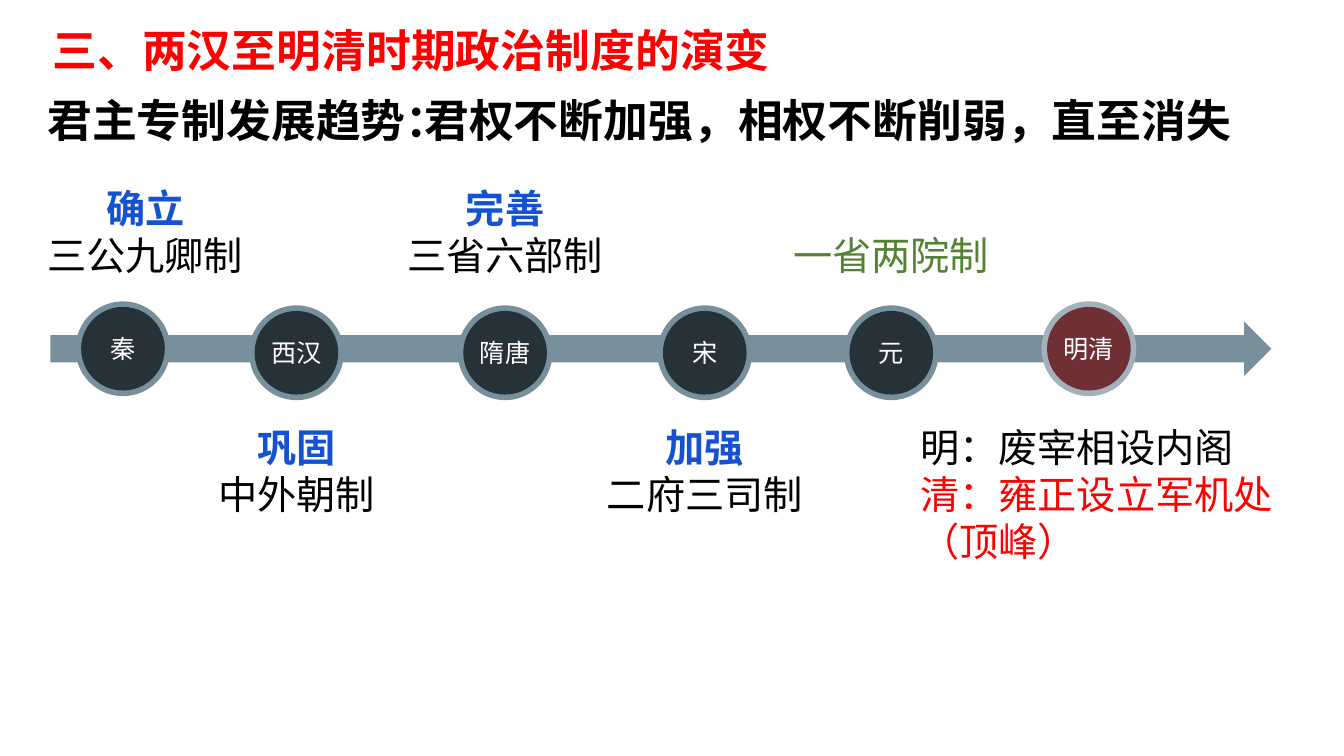
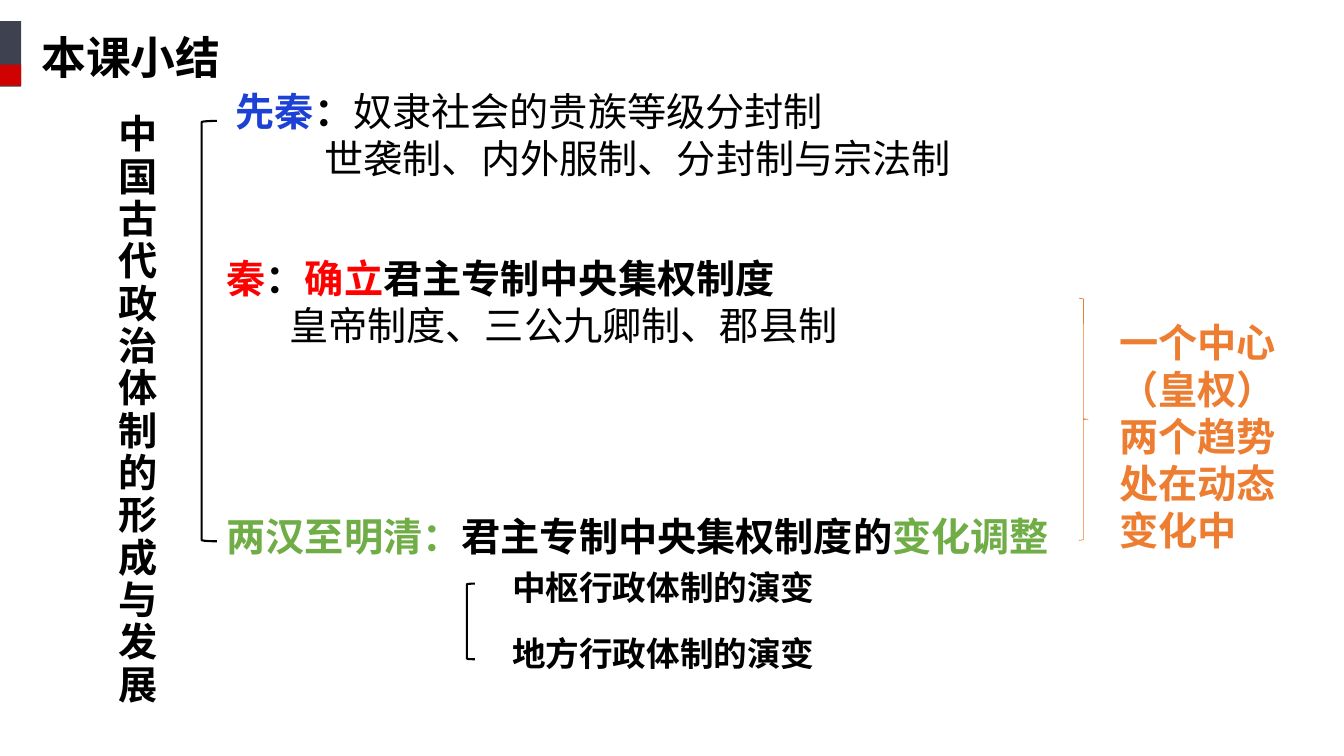
import pptx
import pptx.util
import pptx.dml.color
import pptx.enum.shapes
import pptx.enum.text
import pptx.oxml.ns
import lxml.etree

Inches = pptx.util.Inches
SHAPE = pptx.enum.shapes.MSO_SHAPE
ALIGN = pptx.enum.text.PP_ALIGN
ANCHOR = pptx.enum.text.MSO_ANCHOR
CJK = "Noto Sans CJK SC"
LATIN = "Calibri"
BLACK, WHITE, RED = "000000", "FFFFFF", "FF0000"
BLUE, DEEP_BLUE = "1552D1", "1D41D5"
GREEN, DARK_GREEN, ORANGE = "70AD47", "548235", "ED7D31"
STEEL, NIGHT, SILVER, MAROON = "78909C", "263238", "A3B1BD", "6F2F35"
SLATE, CRIMSON = "3E4150", "CF0101"

ERAS = [
    ("秦", 1.22, 3.46, STEEL, NIGHT),
    ("西汉", 2.94, 3.5, STEEL, NIGHT),
    ("隋唐", 5.01, 3.5, STEEL, NIGHT),
    ("宋", 6.99, 3.5, STEEL, NIGHT),
    ("元", 8.84, 3.5, STEEL, NIGHT),
    ("明清", 10.8, 3.46, SILVER, MAROON),
]
RING, DISC = 0.94, 0.83

LABEL_WIDTH = 2.14
LABELS = [
    (1.44, 1.78, "确立", "三公九卿制"),
    (2.94, 4.15, "巩固", "中外朝制"),
    (5.01, 1.78, "完善", "三省六部制"),
    (6.99, 4.15, "加强", "二府三司制"),
]
TREND = [
    ((0.37, 0.87, 4.2, 0.64), "君主专制发展趋势："),
    ((4.11, 0.87, 8.98, 0.64), "君权不断加强，相权不断削弱，直至消失"),
]
MING_QING = [
    [("明：废宰相设内阁", BLACK, False)],
    [("清：雍正设立军机处", RED, False)],
    [("（顶峰）", RED, False)],
]

PERIODS = [
    ((2.24, 0.85, 10.65, 0.97), 0.88, [
        [("先秦", DEEP_BLUE, True), ("：", BLACK, True), ("奴隶社会的贵族等级分封制", BLACK, False)],
        [("世袭制、内外服制、分封制与宗法制", BLACK, False)],
    ]),
    ((2.15, 2.58, 9.86, 0.82), 0.62, [
        [("秦", RED, True), ("：", BLACK, True), ("确立", RED, True), ("君主专制中央集权制度", BLACK, True)],
        [("皇帝制度、三公九卿制、郡县制", BLACK, False)],
    ]),
    ((2.15, 4.79, 9.16, 1.05), 0, [
        [("两汉至明清：", GREEN, True), ("君主专制中央集权制度的", BLACK, True), ("变化调整", GREEN, True)],
    ]),
]
BRANCHES = [
    ((4.98, 5.57, 4.75, 0.56), "中枢行政体制的演变"),
    ((4.98, 6.22, 4.75, 0.56), "地方行政体制的演变"),
]
BRACKETS = [
    (SHAPE.LEFT_BRACKET, (2, 1.2, 0.15, 4.17), BLACK, 1.5),
    (SHAPE.LEFT_BRACKET, (4.63, 5.79, 0.08, 0.75), BLACK, 1.5),
    (SHAPE.RIGHT_BRACE, (10.7, 2.96, 0.09, 2.4), ORANGE, 0.5),
]
CONCLUSION = ["一个中心", "（皇权）", "两个趋势", "处在动态变化中"]


def rgb(color):
    return pptx.dml.color.RGBColor.from_string(color)


def place(sp, box):
    sp.left, sp.top, sp.width, sp.height = map(Inches, box)


def write(sp, lines, size, align=ALIGN.LEFT, anchor=ANCHOR.TOP, wrap=True,
          spacing=None, latin=CJK):
    tf = sp.text_frame
    tf.word_wrap = wrap
    tf.auto_size = pptx.enum.text.MSO_AUTO_SIZE.NONE
    tf.vertical_anchor = anchor
    for i, line in enumerate(lines):
        p = tf.paragraphs[0] if i == 0 else tf.add_paragraph()
        p.alignment = align
        if spacing:
            p.line_spacing = spacing
        for text, color, bold in line:
            r = p.add_run()
            r.text = text
            r.font.size = pptx.util.Pt(size)
            r.font.name = latin
            r.font.bold = bold
            r.font.color.rgb = rgb(color)
            rPr = r._r.get_or_add_rPr()
            rPr.set("lang", "zh-CN")
            ea = lxml.etree.SubElement(rPr, pptx.oxml.ns.qn("a:ea"))
            ea.set("typeface", CJK)
    return tf


def add_text(slide, box, lines, size, **style):
    return write(slide.shapes.add_textbox(*map(Inches, box)), lines, size, **style)


def add_filled(shapes, kind, box, color):
    sp = shapes.add_shape(kind, *map(Inches, box))
    sp.shadow.inherit = False
    sp.fill.solid()
    sp.fill.fore_color.rgb = rgb(color)
    sp.line.fill.background()
    return sp


def add_slide(prs, title, box, color, **style):
    slide = prs.slides.add_slide(prs.slide_layouts[5])
    place(slide.shapes.title, box)
    write(slide.shapes.title, [[(title, color, True)]], 32, **style)
    return slide


def add_disc(shapes, x, y, size, color):
    return add_filled(shapes, SHAPE.OVAL, (x - size / 2, y - size / 2, size, size), color)


def build_timeline(prs):
    slide = add_slide(prs, "三、两汉至明清时期政治制度的演变", (0.42, 0.07, 9.19, 0.75),
                      RED, spacing=1.2, latin=LATIN)
    for box, text in TREND:
        add_text(slide, box, [[(text, BLACK, True)]], 32, wrap=False)
    add_filled(slide.shapes, SHAPE.RIGHT_ARROW, (0.5, 3.19, 12.11, 0.54), STEEL)
    for era, x, y, ring, fill in ERAS:
        group = slide.shapes.add_group_shape()
        add_disc(group.shapes, x, y, RING, ring)
        disc = add_disc(group.shapes, x, y, DISC, fill)
        tf = write(disc, [[(era, WHITE, False)]], 18, align=ALIGN.CENTER, anchor=ANCHOR.MIDDLE)
        tf.margin_left = tf.margin_right = tf.margin_top = tf.margin_bottom = 0
    for x, top, stage, system in LABELS:
        add_text(slide, (x - LABEL_WIDTH / 2, top, LABEL_WIDTH, 1.04),
                 [[(stage, BLUE, True)], [(system, BLACK, False)]], 28,
                 align=ALIGN.CENTER, wrap=False)
    add_text(slide, (7.77, 2.25, LABEL_WIDTH, 0.57),
             [[("一省两院制", DARK_GREEN, False)]], 28, wrap=False)
    add_text(slide, (9.03, 4.15, 3.7, 1.51), MING_QING, 28, wrap=False)


def build_summary(prs):
    slide = add_slide(prs, "本课小结", (0.31, 0.21, 6.88, 0.77), BLACK,
                      anchor=ANCHOR.MIDDLE, spacing=0.9)
    add_filled(slide.shapes, SHAPE.RECTANGLE, (0, 0.21, 0.21, 0.65), SLATE)
    add_filled(slide.shapes, SHAPE.RECTANGLE, (0, 0.64, 0.21, 0.21), CRIMSON)
    add_text(slide, (1.08, 1.2, 0.7, 5.76), [[("中国古代政治体制的形成与发展", BLACK, True)]],
             28, anchor=ANCHOR.MIDDLE, spacing=0.9)
    for box, indent, lines in PERIODS:
        tf = add_text(slide, box, lines, 28, anchor=ANCHOR.MIDDLE)
        for p in tf.paragraphs[1:]:
            p._p.get_or_add_pPr().set("marL", str(Inches(indent)))
    for box, text in BRANCHES:
        add_text(slide, box, [[(text, BLACK, True)]], 24, anchor=ANCHOR.MIDDLE, spacing=0.9)
    for kind, box, color, width in BRACKETS:
        sp = slide.shapes.add_shape(kind, *map(Inches, box))
        sp.shadow.inherit = False
        sp.fill.background()
        sp.line.color.rgb = rgb(color)
        sp.line.width = pptx.util.Pt(width)
    add_text(slide, (11, 3.11, 1.89, 2.46), [[(text, ORANGE, True)] for text in CONCLUSION],
             28, latin=LATIN)


def main():
    prs = pptx.Presentation()
    prs.slide_width, prs.slide_height = Inches(13.33), Inches(7.5)
    build_timeline(prs)
    build_summary(prs)
    prs.save("out.pptx")


if __name__ == "__main__":
    main()
